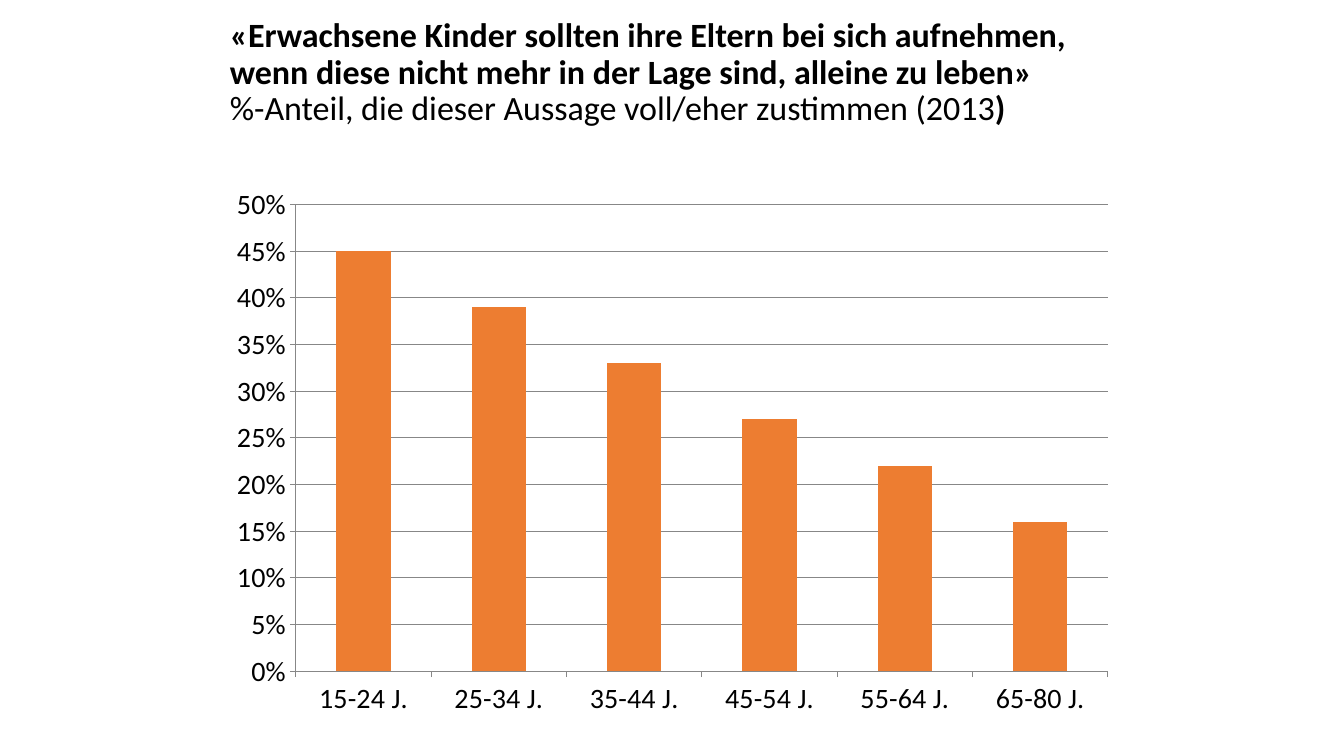
from dataclasses import dataclass

from pptx import Presentation
from pptx.chart.data import CategoryChartData
from pptx.dml.color import RGBColor
from pptx.enum.chart import XL_CHART_TYPE as ChartType, XL_TICK_MARK as TickMark
from pptx.enum.text import MSO_ANCHOR, MSO_AUTO_SIZE, PP_ALIGN
from pptx.util import Inches, Pt


@dataclass(frozen=True)
class Theme:
    font: str = "Calibri"
    title_size: float = 24.3
    chart_size: float = 20
    ink: RGBColor = RGBColor(0, 0, 0)
    bar: RGBColor = RGBColor(0xED, 0x7D, 0x31)
    grid: RGBColor = RGBColor(0x87, 0x87, 0x87)


THEME = Theme()
SLIDE_WIDTH, SLIDE_HEIGHT = Inches(13.33), Inches(7.5)

# Left, top, width and height as shares of the slide
TITLE_AREA = (0.1635, 0.0387, 0.675, 0.1653)
CHART_AREA = (0.1628, 0.2333, 0.675, 0.728)

STATEMENT = [
    ("«Erwachsene Kinder sollten ihre Eltern bei sich aufnehmen, "
     "wenn diese nicht mehr in der Lage sind, alleine zu leben»", True),
]
MEASURE = [
    ("%-Anteil, die dieser Aussage voll/eher zustimmen (2013", False),
    (")", True),
]
AGREEMENT = {
    "15-24 J.": 0.45,
    "25-34 J.": 0.39,
    "35-44 J.": 0.33,
    "45-54 J.": 0.27,
    "55-64 J.": 0.22,
    "65-80 J.": 0.16,
}


def apply_format(target, values):
    for attribute, value in values.items():
        setattr(target, attribute, value)


def place(area):
    left, top, width, height = area
    return {
        "left": int(left * SLIDE_WIDTH),
        "top": int(top * SLIDE_HEIGHT),
        "width": int(width * SLIDE_WIDTH),
        "height": int(height * SLIDE_HEIGHT),
    }


def format_font(font, size, bold=False):
    apply_format(font, {"name": THEME.font, "size": Pt(size), "bold": bold})
    font.color.rgb = THEME.ink


def fill_title(title, lines):
    apply_format(title, place(TITLE_AREA))
    frame = title.text_frame
    # The deep bottom inset lifts the centred text above the box's middle
    apply_format(frame, {
        "word_wrap": True,
        "auto_size": MSO_AUTO_SIZE.NONE,
        "vertical_anchor": MSO_ANCHOR.MIDDLE,
        "margin_bottom": Inches(0.42),
    })
    for number, line in enumerate(lines):
        paragraph = frame.add_paragraph() if number else frame.paragraphs[0]
        apply_format(paragraph, {
            "alignment": PP_ALIGN.LEFT, "line_spacing": 0.9, "space_before": Pt(0),
        })
        for text, bold in line:
            run = paragraph.add_run()
            run.text = text
            format_font(run.font, THEME.title_size, bold)


def format_axis(axis):
    apply_format(axis, {
        "major_tick_mark": TickMark.OUTSIDE, "minor_tick_mark": TickMark.NONE,
    })
    axis.format.line.color.rgb = THEME.grid
    axis.format.line.width = Pt(0.75)


def add_bar_chart(slide, values):
    data = CategoryChartData(number_format="0%")
    data.categories = values.keys()
    data.add_series("Series 1", values.values())
    box = place(CHART_AREA)
    chart = slide.shapes.add_chart(
        ChartType.COLUMN_CLUSTERED, *box.values(), data).chart
    apply_format(chart, {"has_legend": False, "has_title": False})
    format_font(chart.font, THEME.chart_size)

    bars = chart.plots[0]
    apply_format(bars, {"gap_width": 150, "vary_by_categories": False})
    bars.series[0].format.fill.solid()
    bars.series[0].format.fill.fore_color.rgb = THEME.bar

    for axis in (chart.category_axis, chart.value_axis):
        format_axis(axis)
    share_axis = chart.value_axis
    apply_format(share_axis, {
        "minimum_scale": 0, "maximum_scale": 0.5, "major_unit": 0.05,
        "has_major_gridlines": True,
    })
    apply_format(share_axis.tick_labels, {
        "number_format": "0%", "number_format_is_linked": False,
    })
    gridline = share_axis.major_gridlines.format.line
    gridline.color.rgb = THEME.grid
    gridline.width = Pt(0.75)


def main():
    deck = Presentation()
    apply_format(deck, {"slide_width": SLIDE_WIDTH, "slide_height": SLIDE_HEIGHT})
    title_only = deck.slide_layouts.get_by_name("Title Only")
    slide = deck.slides.add_slide(title_only)
    fill_title(slide.shapes.title, [STATEMENT, MEASURE])
    add_bar_chart(slide, AGREEMENT)
    deck.save("out.pptx")


if __name__ == "__main__":
    main()
